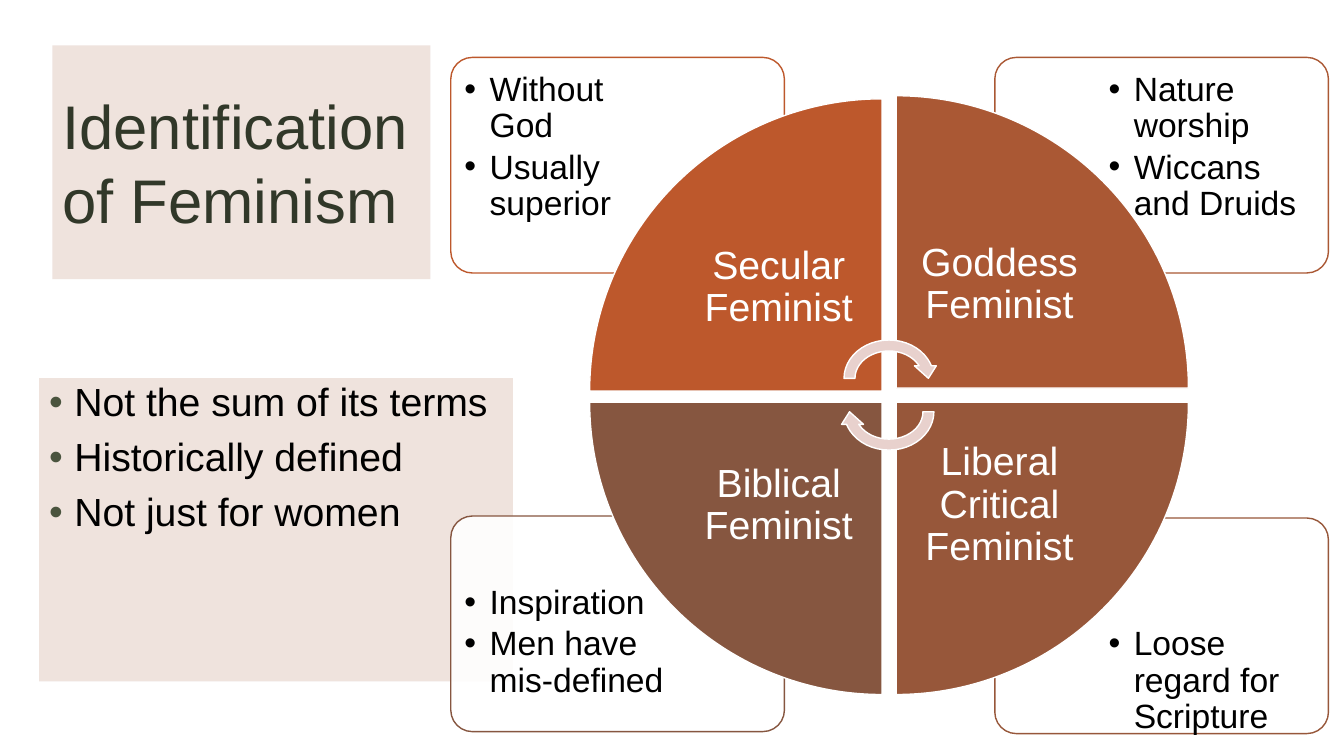
from lxml import etree
from pptx import Presentation
from pptx.dml.color import RGBColor
from pptx.enum.shapes import MSO_SHAPE as Shape
from pptx.enum.text import MSO_ANCHOR as Anchor, MSO_AUTO_SIZE as AutoSize, PP_ALIGN as Align
from pptx.oxml.ns import qn
from pptx.util import Pt

BULLET_INDENT = 18
CARD_SIZE = (238.3, 154)
WEDGE_SIZE = 208.8
LABEL_SIZE = 147.6
ARROW_SIZE = (72, 62.6)

QUADRANTS = [
    {"label": ["Secular", "Feminist"], "color": "BD582C", "wedge": (421.2, 70.6),
     "card": (322, 41), "notes": (324.7, 44.6, 160, 108.7),
     "points": ["Without God", "Usually superior"]},
    {"label": ["Goddess Feminist"], "color": "AA5834", "wedge": (640.1, 68.4),
     "card": (710.6, 41), "notes": (784.8, 44.6, 160, 108.7),
     "points": ["Nature worship", "Wiccans and Druids"]},
    {"label": ["Liberal Critical Feminist"], "color": "97573A", "wedge": (640.1, 287.3),
     "card": (710.6, 370), "notes": (784.8, 440.6, 160, 80),
     "points": ["Loose regard for Scripture"]},
    {"label": ["Biblical Feminist"], "color": "865640", "wedge": (421.2, 287.3),
     "card": (322, 368.6), "notes": (324.7, 411, 160, 108.7),
     "points": ["Inspiration", "Men have mis-defined"]},
]


def rgb(color):
    """Turn a hex string into a colour."""
    return RGBColor.from_string(color)


def apply_format(target, values):
    """Set every attribute in a dict of format values."""
    for name, value in values.items():
        setattr(target, name, value)


def paint(shape, fill, opacity=100, line=None):
    """Give a shape its fill, opacity and outline."""
    shape.fill.solid()
    shape.fill.fore_color.rgb = rgb(fill)
    if opacity < 100:
        color = shape.fill._xPr.find(qn("a:solidFill"))[0]
        etree.SubElement(color, qn("a:alpha"), val=str(opacity * 1000))
    if line:
        shape.line.color.rgb = rgb(line)
        shape.line.width = Pt(1)
    else:
        shape.line.fill.background()


def add_bullet(para, color):
    """Give a paragraph a hanging bullet."""
    props = para._p.get_or_add_pPr()
    props.set("marL", str(Pt(BULLET_INDENT)))
    props.set("indent", str(-Pt(BULLET_INDENT)))
    bullet_color = etree.SubElement(props, qn("a:buClr"))
    etree.SubElement(bullet_color, qn("a:srgbClr"), val=color)
    etree.SubElement(props, qn("a:buFont"), typeface="Arial")
    etree.SubElement(props, qn("a:buChar"), char="•")


def write(shape, lines, size, color, align=Align.LEFT, anchor=Anchor.TOP,
          spacing=0.9, before=0, after=0, bullet=None, inset=None):
    """Fill a shape with formatted paragraphs."""
    frame = shape.text_frame
    apply_format(frame, {"word_wrap": True, "auto_size": AutoSize.NONE,
                         "vertical_anchor": anchor})
    if inset is not None:
        sides = ("left", "top", "right", "bottom")
        apply_format(frame, {f"margin_{side}": Pt(inset) for side in sides})
    for index, line in enumerate(lines):
        para = frame.add_paragraph() if index else frame.paragraphs[0]
        para.text = line
        if bullet:
            add_bullet(para, bullet)
        apply_format(para, {"alignment": align, "line_spacing": spacing,
                            "space_before": Pt(before if index else 0),
                            "space_after": Pt(after)})
        apply_format(para.font, {"name": "Arial", "size": Pt(size)})
        para.font.color.rgb = rgb(color)


def add_box(page, left, top, width, height):
    """Add a text box."""
    return page.shapes.add_textbox(Pt(left), Pt(top), Pt(width), Pt(height))


def add_figure(page, kind, left, top, width, height, rotation=0):
    """Add a preset shape without a shadow."""
    figure = page.shapes.add_shape(kind, Pt(left), Pt(top), Pt(width), Pt(height))
    figure.shadow.inherit = False
    figure.rotation = rotation
    return figure


def draw_title(page, left, top, width, height):
    """Place the title on its tinted panel."""
    title = page.shapes.title
    apply_format(title, {"left": Pt(left), "top": Pt(top),
                         "width": Pt(width), "height": Pt(height)})
    paint(title, "EBDCD5", 80)
    write(title, ["Identification of Feminism"], 44, "313829",
          anchor=Anchor.MIDDLE, spacing=1.0)


def draw_summary(page, left, top, width, height):
    """Place the bulleted summary on its tinted panel."""
    summary = add_box(page, left, top, width, height)
    paint(summary, "EBDCD5", 80)
    write(summary, ["Not the sum of its terms", "Historically defined", "Not just for women"],
          28, "000000", before=9, bullet="4A543E")


def draw_card(page, quadrant):
    """Draw the outlined corner card of a quadrant with its points."""
    card = add_figure(page, Shape.ROUNDED_RECTANGLE, *quadrant["card"], *CARD_SIZE)
    card.adjustments[0] = 0.1
    paint(card, "FFFFFF", 90, quadrant["color"])
    write(add_box(page, *quadrant["notes"]), quadrant["points"], 24, "000000",
          after=3.6, bullet="000000", inset=7.2)


def draw_wedge(page, quadrant, index):
    """Draw a quarter disc with its label against the inner corner."""
    left, top = quadrant["wedge"]
    wedge = add_figure(page, Shape.PIE_WEDGE, left, top, WEDGE_SIZE, WEDGE_SIZE, 90 * index)
    paint(wedge, quadrant["color"], line="FFFFFF")
    shift = WEDGE_SIZE - LABEL_SIZE
    label = add_box(page, left + shift * (index in (0, 3)), top + shift * (index < 2),
                    LABEL_SIZE, LABEL_SIZE)
    write(label, quadrant["label"], 28, "FFFFFF", Align.CENTER, Anchor.MIDDLE, inset=7.2)


def draw_cycle(page, left, top, gap):
    """Draw the two turning arrows at the hub."""
    for index in range(2):
        arrow = add_figure(page, Shape.CIRCULAR_ARROW, left, top + gap * index,
                           *ARROW_SIZE, 180 * index)
        paint(arrow, "E8D1CD", line="FFFFFF")


def main():
    """Build and save the slide."""
    deck = Presentation()
    apply_format(deck, {"slide_width": Pt(960), "slide_height": Pt(540)})
    page = deck.slides.add_slide(deck.slide_layouts[5])
    draw_title(page, 37.4, 32.4, 270, 167)
    draw_summary(page, 28, 270, 338.4, 216.7)
    for index in (2, 3, 1, 0):
        draw_card(page, QUADRANTS[index])
    for index, quadrant in enumerate(QUADRANTS):
        draw_wedge(page, quadrant, index)
    draw_cycle(page, 599, 239, 23.8)
    deck.save("out.pptx")


if __name__ == "__main__":
    main()
